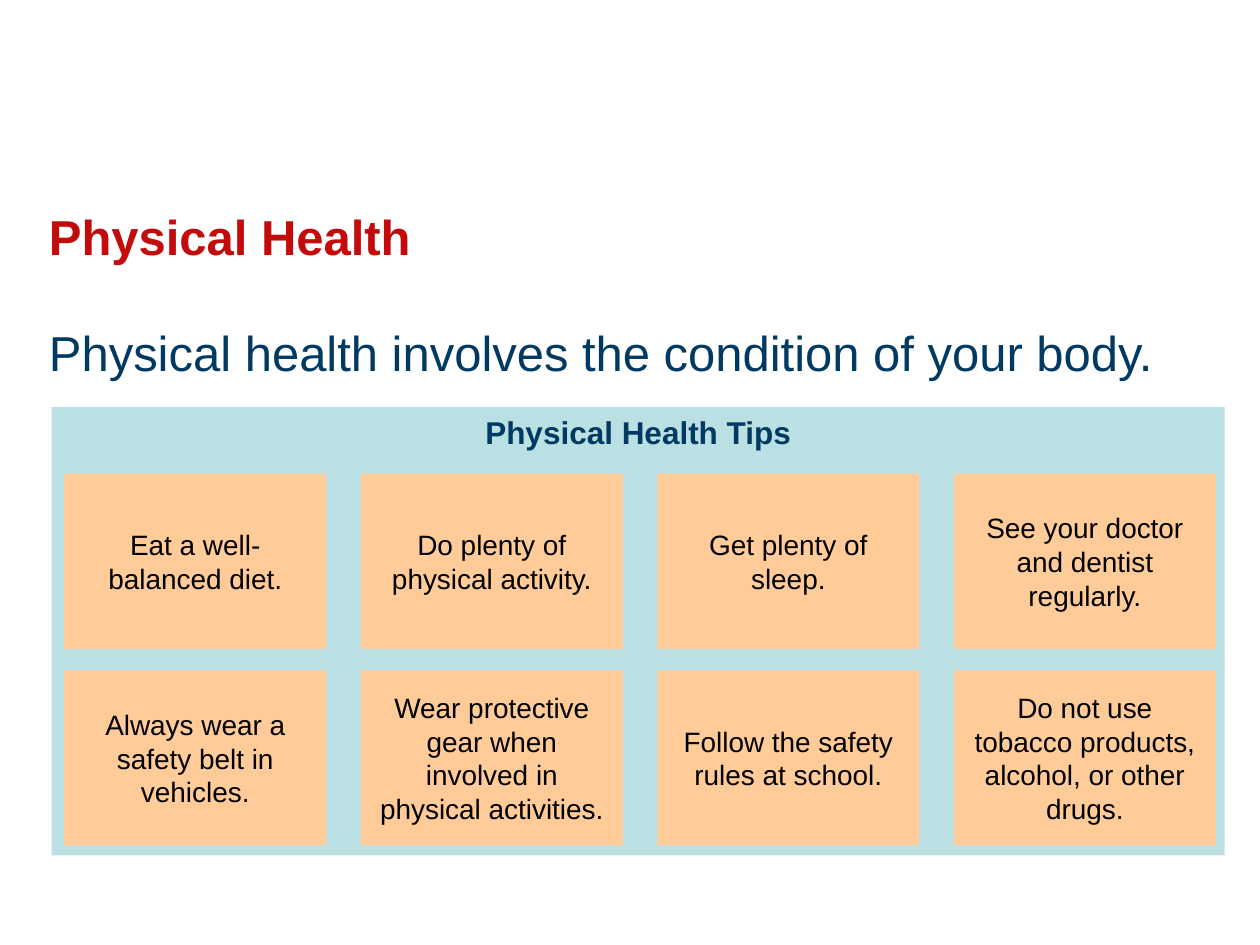
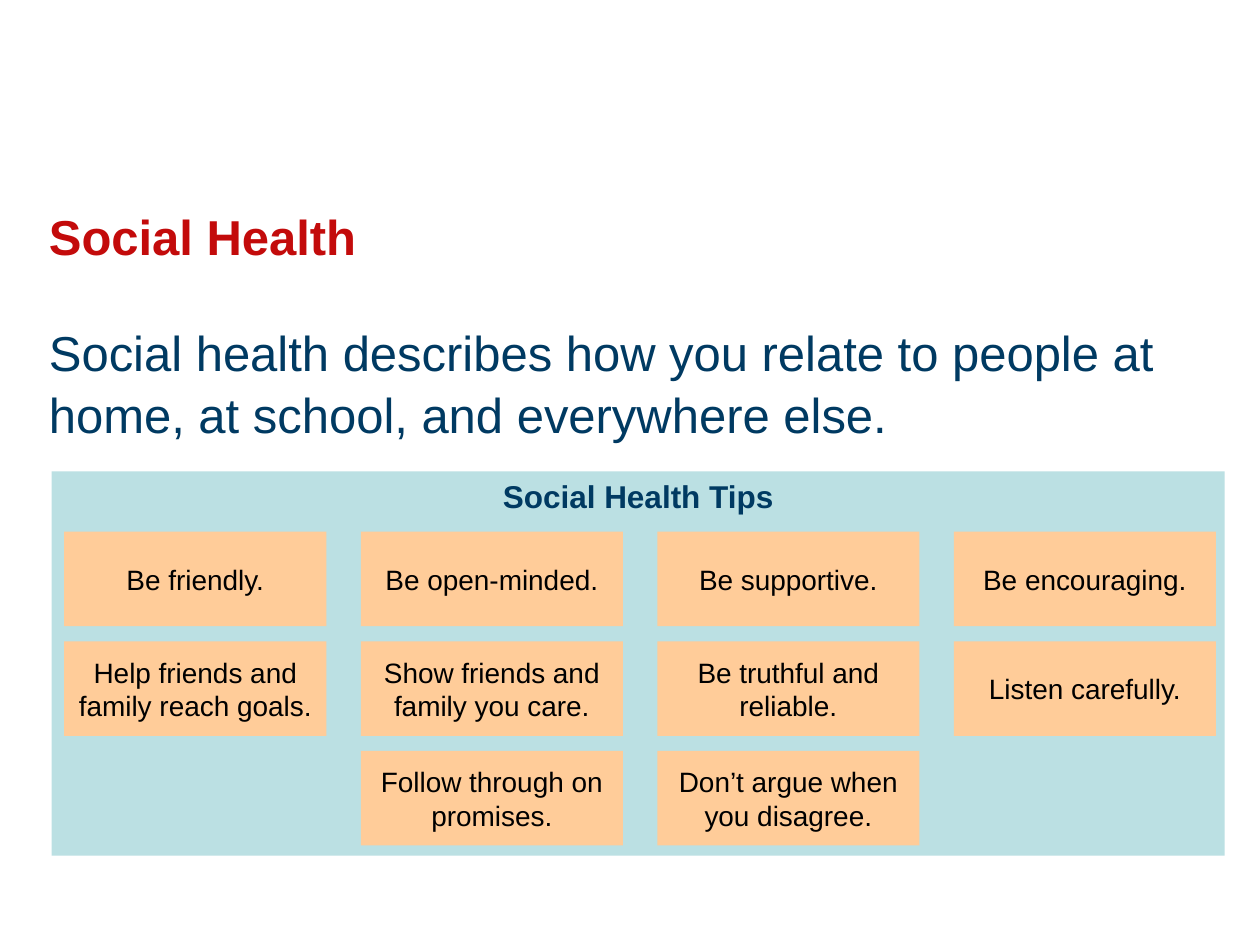
from pptx import Presentation
from pptx.dml.color import RGBColor
from pptx.enum.shapes import MSO_SHAPE
from pptx.enum.text import MSO_ANCHOR, PP_ALIGN
from pptx.util import Inches, Pt

RED = RGBColor(0xC3, 0x0B, 0x0B)
NAVY = RGBColor(0x00, 0x3A, 0x62)
BLACK = RGBColor(0x00, 0x00, 0x00)
TEAL = RGBColor(0xBB, 0xE0, 0xE3)
PEACH = RGBColor(0xFF, 0xCC, 0x99)

# Text styles
TITLE = {"size": Pt(28), "bold": True}
BODY = {"size": Pt(28), "bold": False}
HEAD = {"size": Pt(18), "bold": True}
TIP = {"size": Pt(16), "bold": False}

# Tip grid: four columns, rows counted up from a shared bottom edge
COLS = 4
LEFT, RIGHT, BOTTOM = 0.51, 9.65, 6.71
CARD = 2.08
STEP = (RIGHT - LEFT - CARD) / (COLS - 1)

# Panel top, body size, card height and row step differ by slide
PAGES = [
    {
        "name": "Physical Health",
        "body": "Physical health involves the condition of your body.",
        "wide": 9.49, "top": 3.23, "high": 1.39, "row": 1.56,
        "tips": [
            ["Eat a well-balanced diet.",
             "Do plenty of physical activity.",
             "Get plenty of\vsleep.",
             "See your doctor and dentist regularly."],
            ["Always wear a safety belt in vehicles.",
             "Wear protective gear when involved in physical activities.",
             "Follow the safety rules at school.",
             "Do not use tobacco products, alcohol, or other drugs."],
        ],
    },
    {
        "name": "Social Health",
        "body": "Social health describes how you relate to people at home, "
                "at school, and everywhere else.",
        "wide": 9.33, "top": 3.74, "high": 0.75, "row": 0.87,
        "tips": [
            ["Be friendly.", "Be open-minded.", "Be supportive.",
             "Be encouraging."],
            ["Help friends and family reach goals.",
             "Show friends and family you care.",
             "Be truthful and reliable.",
             "Listen carefully."],
            ["Follow through on promises.",
             "Don’t argue when you disagree."],
        ],
    },
]


def write(shape, text, style, color, align, anchor=MSO_ANCHOR.TOP):
    frame = shape.text_frame
    frame.word_wrap = True
    frame.vertical_anchor = anchor
    para = frame.paragraphs[0]
    para.text = text
    para.alignment = align
    para.font.name = "Arial"
    para.font.color.rgb = color
    for key, value in style.items():
        setattr(para.font, key, value)
    return para


def block(slide, box, fill):
    shape = slide.shapes.add_shape(MSO_SHAPE.RECTANGLE, *map(Inches, box))
    shape.shadow.inherit = False
    shape.fill.solid()
    shape.fill.fore_color.rgb = fill
    shape.line.fill.background()
    return shape


deck = Presentation()
deck.slide_width, deck.slide_height = Inches(10), Inches(7.5)

for page in PAGES:
    slide = deck.slides.add_slide(deck.slide_layouts[6])

    # Panel with its heading
    top = page["top"]
    panel = block(slide, (0.41, top, 9.31, 6.79 - top), TEAL)
    write(panel, page["name"] + " Tips", HEAD, NAVY, PP_ALIGN.CENTER)

    # Title and body
    title = slide.shapes.add_textbox(*map(Inches, (0.29, 1.59, 9.33, 0.68)))
    write(title, page["name"], TITLE, RED, PP_ALIGN.LEFT)
    body = slide.shapes.add_textbox(
        *map(Inches, (0.29, 2.49, page["wide"], top + 0.1 - 2.49)))
    para = write(body, page["body"], BODY, NAVY, PP_ALIGN.LEFT)
    para.line_spacing = 1.05

    # Tip cards, each row centred on the grid
    high, rows = page["high"], page["tips"]
    first = BOTTOM - high - (len(rows) - 1) * page["row"]
    for r, row in enumerate(rows):
        skip = (COLS - len(row)) / 2
        for c, tip in enumerate(row):
            box = (LEFT + (skip + c) * STEP, first + r * page["row"],
                   CARD, high)
            write(block(slide, box, PEACH), tip, TIP, BLACK,
                  PP_ALIGN.CENTER, MSO_ANCHOR.MIDDLE)

deck.save("out.pptx")
